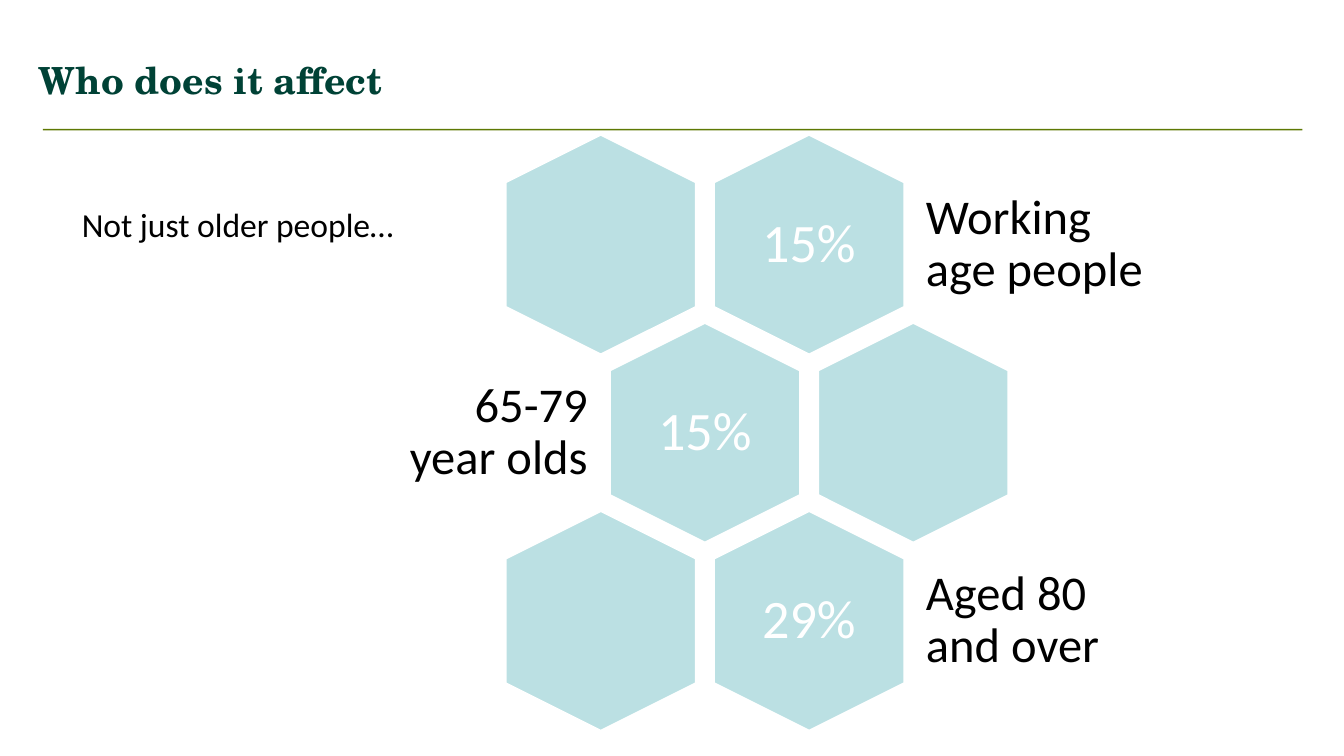
from pptx import Presentation
from pptx.dml.color import RGBColor
from pptx.enum.shapes import MSO_SHAPE
from pptx.enum.text import MSO_ANCHOR, MSO_AUTO_SIZE, PP_ALIGN
from pptx.util import Inches, Pt

RECTANGLE, HEXAGON = MSO_SHAPE.RECTANGLE, MSO_SHAPE.HEXAGON
LEFT, CENTER, RIGHT = PP_ALIGN.LEFT, PP_ALIGN.CENTER, PP_ALIGN.RIGHT
MIDDLE, TOP = MSO_ANCHOR.MIDDLE, MSO_ANCHOR.TOP
NO_FIT = MSO_AUTO_SIZE.NONE

GREEN = RGBColor(0x00, 0x42, 0x36)
OLIVE = RGBColor(0x5E, 0x78, 0x03)
PALE_BLUE = RGBColor(0xBB, 0xE0, 0xE3)
WHITE = RGBColor(0xFF, 0xFF, 0xFF)
BLACK = RGBColor(0x00, 0x00, 0x00)

# Content
TITLE = "Who does it affect"
REMARK = "Not just older people…"
# Each row: share, age group, column of the share, side and width of the label
ROWS = [
    ("15%", "Working age people", 1, RIGHT, 1.84),
    ("15%", "65-79 year olds", 0, LEFT, 1.78),
    ("29%", "Aged 80 and over", 1, RIGHT, 1.84),
]

# Slide and honeycomb geometry in inches; hexagons are turned by 90 degrees
SLIDE_W = 10
SLIDE_H = SLIDE_W * 9 / 16
HEX_LONG, HEX_SHORT = 1.65, 1.43
FIRST_X, FIRST_Y = 4.47, 1.82
COLUMN_STEP, ROW_STEP = 1.55, 1.4
ODD_ROW_SHIFT = COLUMN_STEP / 2
SHARE_W, SHARE_H = 0.99, 1.13
LABEL_H = 0.99
LABEL_GAP = 0.76


def write(frame, text, size, color, align=LEFT, font="Calibri", bold=False, spacing=1.0):
    paragraph = frame.paragraphs[0]
    paragraph.alignment = align
    paragraph.line_spacing = spacing
    run = paragraph.add_run()
    run.text = text
    run.font.name, run.font.size, run.font.bold = font, Pt(size), bold
    run.font.color.rgb = color


def set_frame(frame, insets, anchor=MIDDLE, wrap=True):
    frame.auto_size = NO_FIT
    frame.word_wrap = wrap
    frame.vertical_anchor = anchor
    (frame.margin_left, frame.margin_top,
     frame.margin_right, frame.margin_bottom) = map(Inches, insets)


def add_text(slide, x, y, w, h, inset, *text_args, **text_options):
    box = slide.shapes.add_textbox(Inches(x), Inches(y), Inches(w), Inches(h))
    set_frame(box.text_frame, [inset] * 4)
    write(box.text_frame, *text_args, **text_options)


def add_hexagon(slide, center_x, center_y):
    cell = slide.shapes.add_shape(
        HEXAGON, Inches(center_x - HEX_LONG / 2), Inches(center_y - HEX_SHORT / 2),
        Inches(HEX_LONG), Inches(HEX_SHORT))
    cell.rotation = 90
    cell.adjustments[0] = 0.25
    cell.shadow.inherit = False
    cell.fill.solid()
    cell.fill.fore_color.rgb = PALE_BLUE
    cell.line.color.rgb = WHITE
    cell.line.width = Pt(2)


def main():
    prs = Presentation()
    prs.slide_width, prs.slide_height = Inches(SLIDE_W), Inches(SLIDE_H)
    slide = prs.slides.add_slide(prs.slide_layouts[5])

    # Title and rule
    title = slide.shapes.title
    title.left, title.top = Inches(0.25), Inches(0.3)
    title.width, title.height = Inches(8.37), Inches(0.55)
    set_frame(title.text_frame, (0.04, 0.04, 0.09, 0))
    write(title.text_frame, TITLE, 20, GREEN, font="TeX Gyre Schola", bold=True)

    rule = slide.shapes.add_shape(
        RECTANGLE, Inches(0.32), Inches(0.96), Inches(9.37), Inches(0.01))
    rule.shadow.inherit = False
    rule.fill.solid()
    rule.fill.fore_color.rgb = OLIVE
    rule.line.fill.background()

    # Honeycomb with shares and age groups
    for row, (share, group, share_column, side, label_w) in enumerate(ROWS):
        center_y = FIRST_Y + row * ROW_STEP
        row_x = FIRST_X + row % 2 * ODD_ROW_SHIFT
        for column in range(2):
            add_hexagon(slide, row_x + column * COLUMN_STEP, center_y)
        share_x = row_x + share_column * COLUMN_STEP
        add_text(slide, share_x - SHARE_W / 2, center_y - SHARE_H / 2, SHARE_W, SHARE_H,
                 0.12, share, 29, WHITE, align=CENTER, spacing=0.9)
        on_right = side == RIGHT
        label_x = share_x + LABEL_GAP if on_right else share_x - LABEL_GAP - label_w
        add_text(slide, label_x, center_y - LABEL_H / 2, label_w, LABEL_H,
                 0.11, group, 26, BLACK, align=LEFT if on_right else RIGHT, spacing=0.9)

    # Remark
    remark = slide.shapes.add_textbox(Inches(0.51), Inches(1.47), Inches(2.61), Inches(0.4))
    set_frame(remark.text_frame, (0.1, 0.05, 0.1, 0.05), anchor=TOP, wrap=False)
    write(remark.text_frame, REMARK, 18, BLACK)

    prs.save("out.pptx")


if __name__ == "__main__":
    main()
